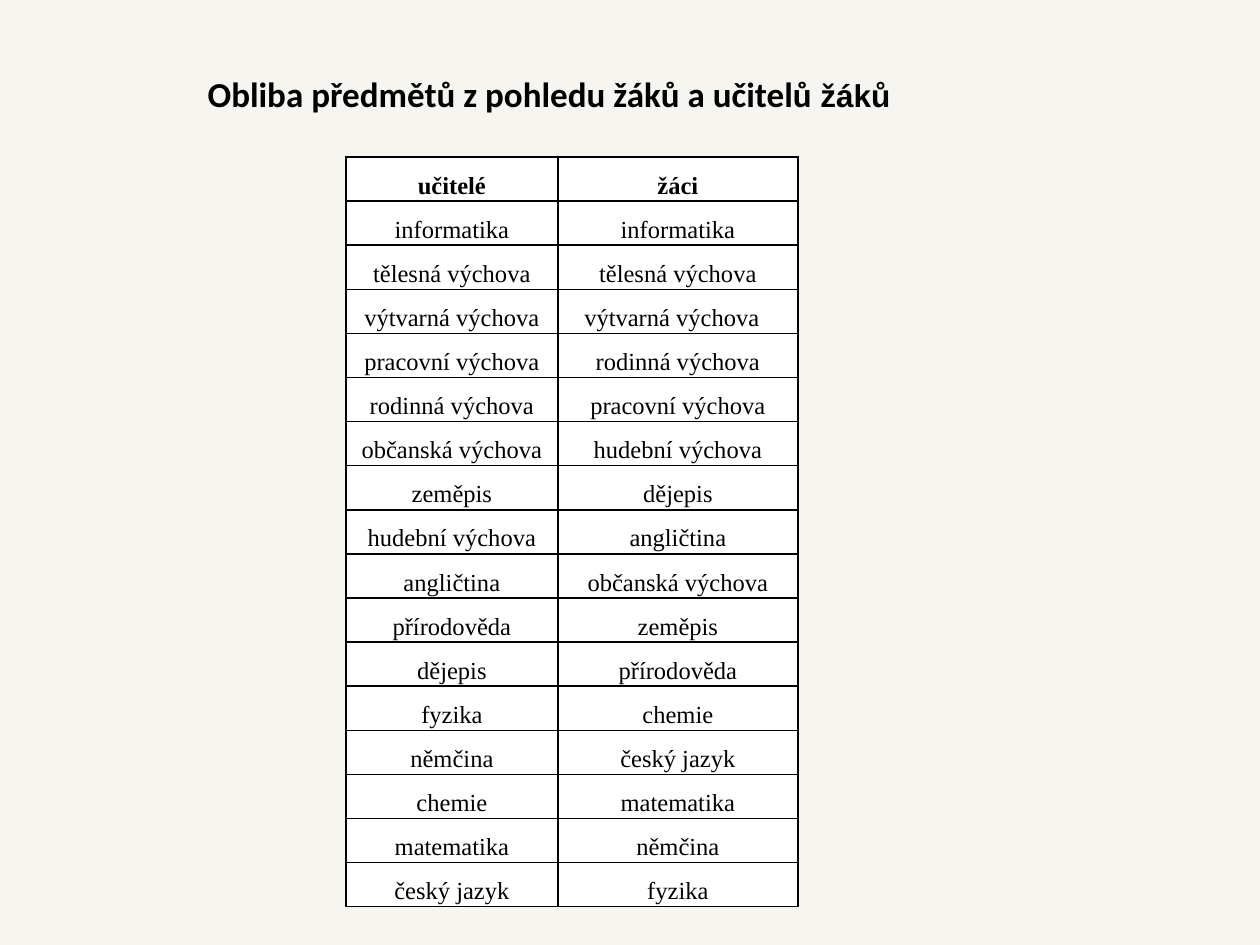
from lxml.etree import SubElement
from pptx import Presentation
from pptx.dml.color import RGBColor
from pptx.enum.text import MSO_ANCHOR, PP_ALIGN
from pptx.oxml.ns import qn
from pptx.util import Pt

PX = 914400 // 126
COLORS = {"background": "F6F5EF", "cell": "FFFFFF", "ink": "000000"}
TITLE = [
    ("Obliba předmětů z pohledu žáků a učitelů ", "Calibri", 20),
    ("žáků", "Arial", 18),
]
HEADERS = ("učitelé", "žáci")
RANKING = [
    ("informatika", "informatika"),
    ("tělesná výchova", "tělesná výchova"),
    ("výtvarná výchova", "výtvarná výchova"),
    ("pracovní výchova", "rodinná výchova"),
    ("rodinná výchova", "pracovní výchova"),
    ("občanská výchova", "hudební výchova"),
    ("zeměpis", "dějepis"),
    ("hudební výchova", "angličtina"),
    ("angličtina", "občanská výchova"),
    ("přírodověda", "zeměpis"),
    ("dějepis", "přírodověda"),
    ("fyzika", "chemie"),
    ("němčina", "český jazyk"),
    ("chemie", "matematika"),
    ("matematika", "němčina"),
    ("český jazyk", "fyzika"),
]
TITLE_BOX = (118, 39, 862, 110)
TABLE_LEFT, TABLE_TOP, TABLE_HEIGHT = 315, 157, 750
COLUMN_WIDTHS = (31, 212, 240)
SHIFTED_CELL, SHIFT = (3, 2), 12
PLAIN_STYLE = "{2D5ABB26-0587-4C30-8999-92F81FD0307C}"


def add_text(paragraph, text, font="Times New Roman", size=14, bold=False, spacing=None):
    paragraph.alignment = PP_ALIGN.CENTER
    paragraph.line_spacing = spacing
    run = paragraph.add_run()
    run.text = text
    run.font.name = font
    run.font.size = Pt(size)
    run.font.bold = bold
    run.font.color.rgb = RGBColor.from_string(COLORS["ink"])


def add_borders(cell, sides):
    properties = cell._tc.get_or_add_tcPr()
    for side in sides:
        line = SubElement(properties, qn(f"a:ln{side}"), w=str(Pt(1)))
        fill = SubElement(line, qn("a:solidFill"))
        SubElement(fill, qn("a:srgbClr"), val=COLORS["ink"])


def add_title(slide):
    title = slide.shapes.title
    title.left, title.top, title.width, title.height = (n * PX for n in TITLE_BOX)
    frame = title.text_frame
    frame.word_wrap = True
    frame.vertical_anchor = MSO_ANCHOR.MIDDLE
    for text, font, size in TITLE:
        add_text(frame.paragraphs[0], text, font=font, size=size, bold=True)


def add_ranking(slide):
    rows = [HEADERS, *RANKING]
    table = slide.shapes.add_table(
        len(rows), len(COLUMN_WIDTHS), TABLE_LEFT * PX, TABLE_TOP * PX,
        sum(COLUMN_WIDTHS) * PX, TABLE_HEIGHT * PX,
    ).table
    table.first_row = table.horz_banding = False
    table._tbl.tblPr.find(qn("a:tableStyleId")).text = PLAIN_STYLE
    for column, width in zip(table.columns, COLUMN_WIDTHS):
        column.width = width * PX
    for row_index, subjects in enumerate(rows):
        table.rows[row_index].height = TABLE_HEIGHT * PX // len(rows)
        for column_index, subject in enumerate(("", *subjects)):
            cell = table.cell(row_index, column_index)
            cell.margin_left = cell.margin_right = cell.margin_top = cell.margin_bottom = 0
            cell.vertical_anchor = MSO_ANCHOR.MIDDLE
            if not subject:
                add_borders(cell, "R")
                continue
            if (row_index, column_index) == SHIFTED_CELL:
                cell.margin_right = SHIFT * PX
            add_borders(cell, "LRTB")
            cell.fill.solid()
            cell.fill.fore_color.rgb = RGBColor.from_string(COLORS["cell"])
            add_text(cell.text_frame.paragraphs[0], subject, bold=row_index == 0, spacing=1.5)


def main():
    presentation = Presentation()
    presentation.slide_width, presentation.slide_height = 1260 * PX, 945 * PX
    slide = presentation.slides.add_slide(presentation.slide_layouts[5])
    background = slide.background.fill
    background.solid()
    background.fore_color.rgb = RGBColor.from_string(COLORS["background"])
    add_title(slide)
    add_ranking(slide)
    presentation.save("out.pptx")


if __name__ == "__main__":
    main()
